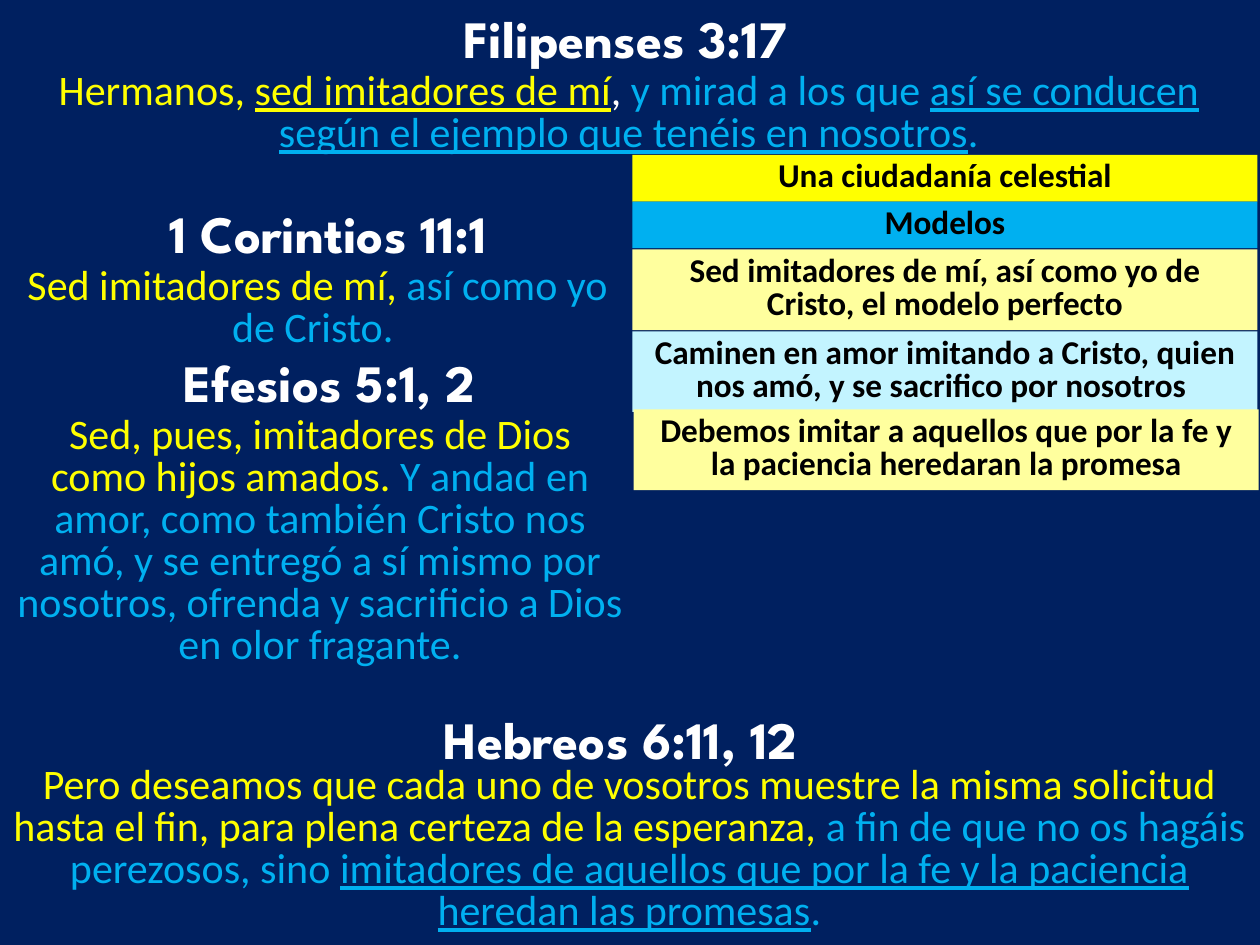
"""Build a slide of Bible passages on imitation, with a column of summary banners."""
from pptx import Presentation
from pptx import util as u
from pptx.dml.color import RGBColor
from pptx.enum import shapes, text

NAVY = RGBColor(0x00, 0x20, 0x60)
WHITE = RGBColor(0xFF, 0xFF, 0xFF)
BLACK = RGBColor(0x00, 0x00, 0x00)
YELLOW = RGBColor(0xFF, 0xFF, 0x00)
BLUE = RGBColor(0x00, 0xB0, 0xF0)
PALE_YELLOW = RGBColor(0xFF, 0xFF, 0x9E)
PALE_BLUE = RGBColor(0xC3, 0xF4, 0xFF)

REFERENCE = {"name": "League Spartan", "size": u.Pt(30), "bold": True}
VERSE = {"name": "Calibri", "size": u.Pt(24), "bold": False}
BANNER = {"name": "Calibri", "size": u.Pt(19), "bold": True}

PASSAGES = [
    ("Filipenses 3:17", (2.64, 0), (0, 0.52, 9.98, 0.78), [
        ("Hermanos, ", YELLOW, False),
        ("sed imitadores de mí", YELLOW, True),
        (", ", WHITE, False),
        ("y mirad a los que ", BLUE, False),
        ("así se conducen según el ejemplo que tenéis en nosotros", BLUE, True),
        (".", BLUE, False)]),
    ("1 Corintios 11:1", (0.28, 1.55), (0.02, 2.07, 5, 0.78), [
        ("Sed imitadores de mí, ", YELLOW, False),
        ("así como yo de Cristo. ", BLUE, False)]),
    ("Efesios 5:1, 2", (0.29, 2.73), (0.04, 3.25, 5, 2.13), [
        ("Sed, pues, imitadores de Dios como hijos amados. ", YELLOW, False),
        ("Y andad en amor, como también Cristo nos amó, y se entregó a sí mismo por "
         "nosotros, ofrenda y sacrificio a Dios en olor fragante.", BLUE, False)]),
    ("Hebreos 6:11, 12", (2.6, 5.56), (0, 6.03, 9.99, 1.45), [
        ("Pero deseamos que cada uno de vosotros muestre la misma solicitud hasta el fin, "
         "para plena certeza de la esperanza, ", YELLOW, False),
        ("a fin de que no os hagáis perezosos, sino ", BLUE, False),
        ("imitadores de aquellos que por la fe y la paciencia heredan las promesas", BLUE, True),
        (".", BLUE, False)]),
]
REFERENCE_SIZE = (4.65, 0.61)

BANNERS = [
    ("Una ciudadanía celestial", YELLOW, (5.02, 1.23), 0.37),
    ("Modelos", BLUE, (5.02, 1.6), 0.37),
    ("Sed imitadores de mí, así como yo de Cristo, el modelo perfecto",
     PALE_YELLOW, (5.02, 1.98), 0.64),
    ("Caminen en amor imitando a Cristo, quien nos amó, y se sacrifico por nosotros ",
     PALE_BLUE, (5.02, 2.63), 0.64),
    ("Debemos imitar a aquellos que por la fe y la paciencia heredaran la promesa",
     PALE_YELLOW, (5.03, 3.25), 0.64),
]
BANNER_WIDTH = 4.96


def write(shape, runs, style, spacing=1.0):
    """Fill a shape with one centred paragraph of coloured runs."""
    frame = shape.text_frame
    settings = {"word_wrap": True, "auto_size": text.MSO_AUTO_SIZE.SHAPE_TO_FIT_TEXT,
                "vertical_anchor": text.MSO_ANCHOR.TOP}
    for name, value in settings.items():
        setattr(frame, name, value)
    paragraph = frame.paragraphs[0]
    layout = {"alignment": text.PP_ALIGN.CENTER, "line_spacing": spacing,
              "space_before": u.Pt(0)}
    for name, value in layout.items():
        setattr(paragraph, name, value)
    for words, color, underline in runs:
        run = paragraph.add_run()
        run.text = words
        for name, value in {**style, "underline": underline}.items():
            setattr(run.font, name, value)
        run.font.color.rgb = color


def place(shape, box):
    """Set the position and size of a shape in inches."""
    for name, value in zip(("left", "top", "width", "height"), box):
        setattr(shape, name, u.Inches(value))


def add_passage(slide, reference, corner, box, runs):
    """Add a reference heading and its verse below it."""
    title = slide.shapes.title
    heading = title if not title.has_text_frame or not title.text_frame.text \
        else slide.shapes.add_textbox(0, 0, 0, 0)
    place(heading, corner + REFERENCE_SIZE)
    write(heading, [(reference, WHITE, False)], REFERENCE)
    verse = slide.shapes.add_textbox(*map(u.Inches, box))
    write(verse, runs, VERSE, VERSE["size"])


def add_banner(slide, words, fill, corner, height):
    """Add a filled summary banner."""
    box = corner + (BANNER_WIDTH, height)
    banner = slide.shapes.add_shape(shapes.MSO_SHAPE.RECTANGLE, *map(u.Inches, box))
    banner.shadow.inherit = False
    banner.fill.solid()
    banner.fill.fore_color.rgb = fill
    banner.line.fill.background()
    write(banner, [(words, BLACK, False)], BANNER, BANNER["size"])


def main():
    """Build and save the presentation."""
    presentation = Presentation()
    presentation.slide_width, presentation.slide_height = u.Inches(10), u.Inches(7.5)
    slide = presentation.slides.add_slide(presentation.slide_layouts[5])
    slide.background.fill.solid()
    slide.background.fill.fore_color.rgb = NAVY
    for passage in PASSAGES:
        add_passage(slide, *passage)
    for banner in BANNERS:
        add_banner(slide, *banner)
    presentation.save("out.pptx")


if __name__ == "__main__":
    main()
